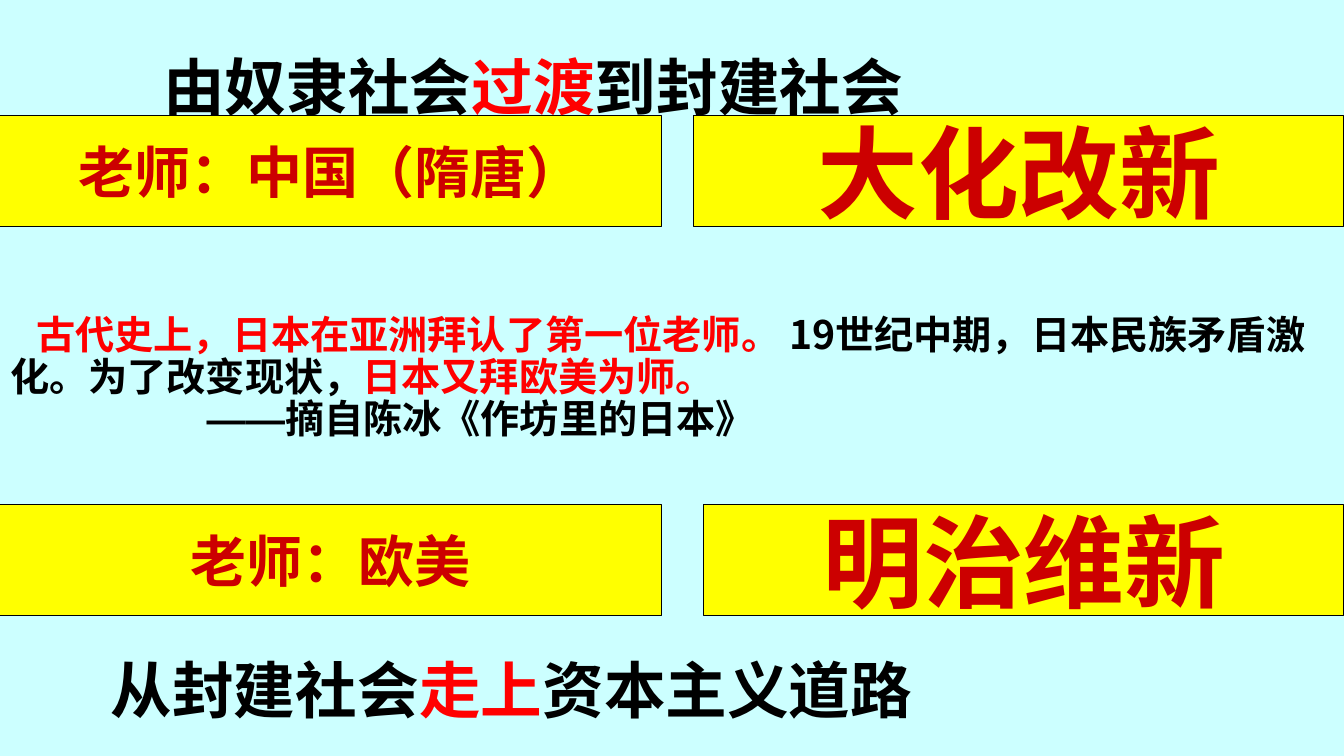
from pptx import Presentation
from pptx.dml.color import RGBColor
from pptx.enum import shapes, text
from pptx.oxml import parse_xml
from pptx.oxml.ns import nsdecls
from pptx.util import Inches, Pt

BLACK, RED, DARK_RED = "000000", "FF0000", "CC0000"
YELLOW, PALE_BLUE = "FFFF00", "CCFFFF"
SANS, SERIF = "Noto Sans CJK SC", "Times New Roman"
WIDTH, HEIGHT = 13.33, 7.5
BAND_HEIGHT = 1.1


def color(value):
    return RGBColor.from_string(value)


def paint(shape, value):
    shape.fill.solid()
    shape.fill.fore_color.rgb = color(value)


def add_run(paragraph, words, size, value, latin=SERIF, east_asian=SANS):
    run = paragraph.add_run()
    run.text = words
    run.font.size = Pt(size)
    run.font.bold = True
    run.font.color.rgb = color(value)
    run.font.name = latin
    properties = run._r.get_or_add_rPr()
    properties.append(parse_xml(f'<a:ea {nsdecls("a")} typeface="{east_asian}"/>'))


def place_quotation(slide, left, top, width, height):
    title = slide.shapes.title
    title.left, title.top = Inches(left), Inches(top)
    title.width, title.height = Inches(width), Inches(height)
    paint(title, PALE_BLUE)
    frame = title.text_frame
    frame.word_wrap = True
    frame.auto_size = text.MSO_AUTO_SIZE.NONE
    frame.vertical_anchor = text.MSO_ANCHOR.MIDDLE
    quotation, attribution = frame.paragraphs[0], frame.add_paragraph()
    for paragraph, indent in ((quotation, 0.26), (attribution, 1.95)):
        paragraph.alignment = text.PP_ALIGN.LEFT
        paragraph.line_spacing = Pt(30)
        paragraph.space_before = Pt(0)
        paragraph._p.get_or_add_pPr().set("indent", str(Inches(indent)))
    for words, value in (
        ("古代史上，日本在亚洲拜认了第一位老师。 ", RED),
        ("19世纪中期，日本民族矛盾激化。为了改变现状，", BLACK),
        ("日本又拜欧美为师。", RED),
    ):
        add_run(quotation, words, 28, value, SANS)
    add_run(attribution, "——", 28, BLACK, "Arial", "Arial")
    add_run(attribution, "摘自陈冰《作坊里的日本》", 28, BLACK, SANS)


def add_panel(slide, left, top, width, height, words, size):
    panel = slide.shapes.add_shape(
        shapes.MSO_SHAPE.RECTANGLE,
        Inches(left), Inches(top), Inches(width), Inches(height))
    panel.shadow.inherit = False
    paint(panel, YELLOW)
    panel.line.color.rgb = color(BLACK)
    panel.line.width = Pt(0.75)
    frame = panel.text_frame
    frame.word_wrap = True
    frame.vertical_anchor = text.MSO_ANCHOR.MIDDLE
    paragraph = frame.paragraphs[0]
    paragraph.alignment = text.PP_ALIGN.CENTER
    add_run(paragraph, words, size, DARK_RED)


def add_reform_band(slide, top, right_start, teacher, reform):
    add_panel(slide, 0, top, 6.56, BAND_HEIGHT, teacher, 40)
    add_panel(slide, right_start, top, WIDTH - right_start, BAND_HEIGHT, reform, 72)


def add_caption(slide, left, top, width, height, before, emphasis, after):
    box = slide.shapes.add_textbox(
        Inches(left), Inches(top), Inches(width), Inches(height))
    box.text_frame.word_wrap = True
    paragraph = box.text_frame.paragraphs[0]
    paragraph.line_spacing = Pt(58)
    for words, value in ((before, BLACK), (emphasis, RED), (after, BLACK)):
        add_run(paragraph, words, 44, value)


def main():
    presentation = Presentation()
    presentation.slide_width = Inches(WIDTH)
    presentation.slide_height = Inches(HEIGHT)
    slide = presentation.slides.add_slide(presentation.slide_layouts[5])
    place_quotation(slide, 0, 0, WIDTH, HEIGHT)
    add_reform_band(slide, 1.15, 6.88, "老师：中国（隋唐）", "大化改新")
    add_caption(slide, 1.52, 0.36, 10.81, 0.83, "由奴隶社会", "过渡", "到封建社会")
    add_reform_band(slide, 5.01, 6.98, "老师：欧美", "明治维新")
    add_caption(slide, 1, 6.35, 11.86, 0.83, "从封建社会", "走上", "资本主义道路")
    presentation.save("out.pptx")


if __name__ == "__main__":
    main()
